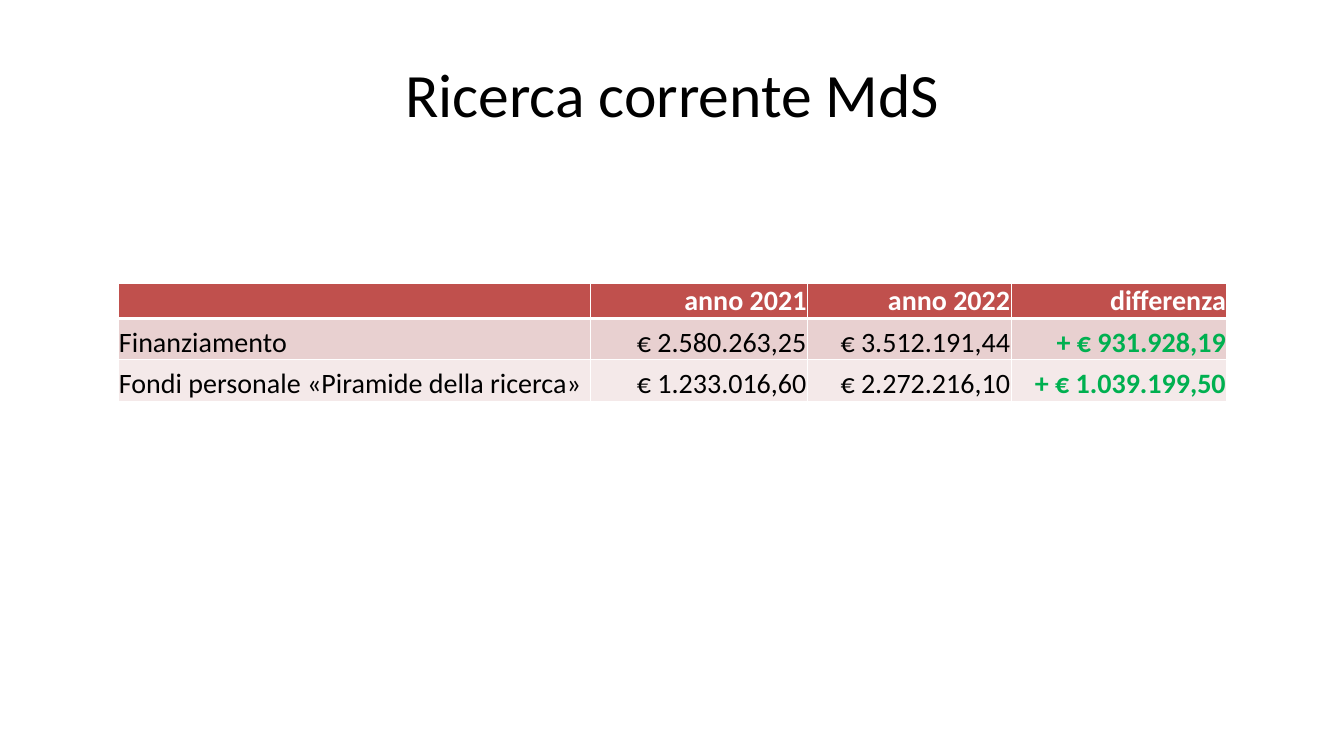
from lxml import etree
from pptx import Presentation
from pptx.dml.color import RGBColor
from pptx.enum.text import MSO_ANCHOR, PP_ALIGN
from pptx.oxml.ns import qn
from pptx.util import Inches, Pt

LEFT, CENTER, RIGHT = PP_ALIGN.LEFT, PP_ALIGN.CENTER, PP_ALIGN.RIGHT
MIDDLE, BOTTOM = MSO_ANCHOR.MIDDLE, MSO_ANCHOR.BOTTOM

BLACK = RGBColor(0x00, 0x00, 0x00)
WHITE = RGBColor(0xFF, 0xFF, 0xFF)
GREEN = RGBColor(0x00, 0xB0, 0x50)
HEADER_RED = RGBColor(0xC0, 0x50, 0x4D)
ROW_FILLS = [HEADER_RED, RGBColor(0xE8, 0xD0, 0xD0), RGBColor(0xF4, 0xE9, 0xE9)]

FONT = "Calibri"
COLUMN_WIDTHS = [4.69, 2.15, 2.02, 2.14]
ROW_HEIGHTS = [0.35, 0.41, 0.41]
FUNDING = [
    ["", "anno 2021", "anno 2022", "differenza"],
    ["Finanziamento", "€ 2.580.263,25", "€ 3.512.191,44", "+ € 931.928,19"],
    ["Fondi personale «Piramide della ricerca»", "€ 1.233.016,60",
     "€ 2.272.216,10", "+ € 1.039.199,50"],
]


def write_text(paragraph, text, size, color, alignment, bold=False):
    paragraph.alignment = alignment
    run = paragraph.add_run()
    run.text = text
    run.font.name = FONT
    run.font.size = Pt(size)
    run.font.bold = bold
    run.font.color.rgb = color


def add_title(slide, text):
    shape = slide.shapes.add_textbox(Inches(0.67), Inches(0.3), Inches(12), Inches(1.25))
    frame = shape.text_frame
    frame.word_wrap = True
    frame.vertical_anchor = MIDDLE
    write_text(frame.paragraphs[0], text, 44, BLACK, CENTER)


def set_border(cell, side, width):
    properties = cell._tc.get_or_add_tcPr()
    line = etree.SubElement(properties, qn(f"a:ln{side}"), w=str(Pt(width)))
    fill = etree.SubElement(line, qn("a:solidFill"))
    etree.SubElement(fill, qn("a:srgbClr"), val=str(WHITE))


def format_cell(cell, row, column):
    cell.vertical_anchor = BOTTOM
    cell.margin_left = cell.margin_right = cell.margin_top = Inches(0.01)
    cell.margin_bottom = Inches(0)
    thick_side = {0: "B", 1: "T"}.get(row)
    for side in "LRTB":
        set_border(cell, side, 3 if side == thick_side else 1)
    cell.fill.solid()
    cell.fill.fore_color.rgb = ROW_FILLS[row]
    text = FUNDING[row][column]
    if text:
        is_difference = column == len(COLUMN_WIDTHS) - 1
        color = WHITE if row == 0 else GREEN if is_difference else BLACK
        write_text(cell.text_frame.paragraphs[0], text, 20, color,
                   LEFT if column == 0 else RIGHT, row == 0 or is_difference)


def add_funding_table(slide):
    table = slide.shapes.add_table(
        len(ROW_HEIGHTS), len(COLUMN_WIDTHS), Inches(1.17), Inches(2.81),
        Inches(sum(COLUMN_WIDTHS)), Inches(sum(ROW_HEIGHTS))).table
    for column, width in zip(table.columns, COLUMN_WIDTHS):
        column.width = Inches(width)
    for row, height in zip(table.rows, ROW_HEIGHTS):
        row.height = Inches(height)
    for row in range(len(ROW_HEIGHTS)):
        for column in range(len(COLUMN_WIDTHS)):
            format_cell(table.cell(row, column), row, column)


def main():
    presentation = Presentation()
    presentation.slide_width = Inches(13.33)
    presentation.slide_height = Inches(7.5)
    slide = presentation.slides.add_slide(presentation.slide_layouts[6])
    add_title(slide, "Ricerca corrente MdS")
    add_funding_table(slide)
    presentation.save("out.pptx")


if __name__ == "__main__":
    main()
